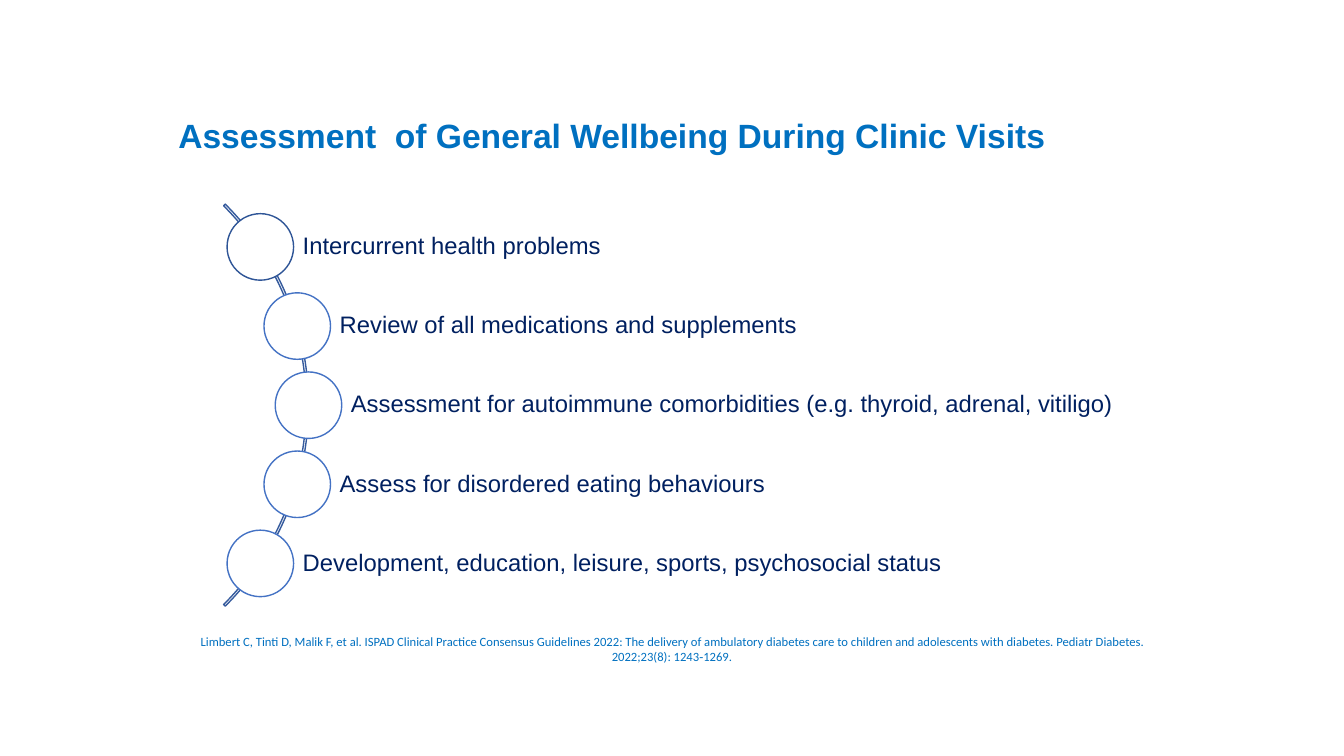
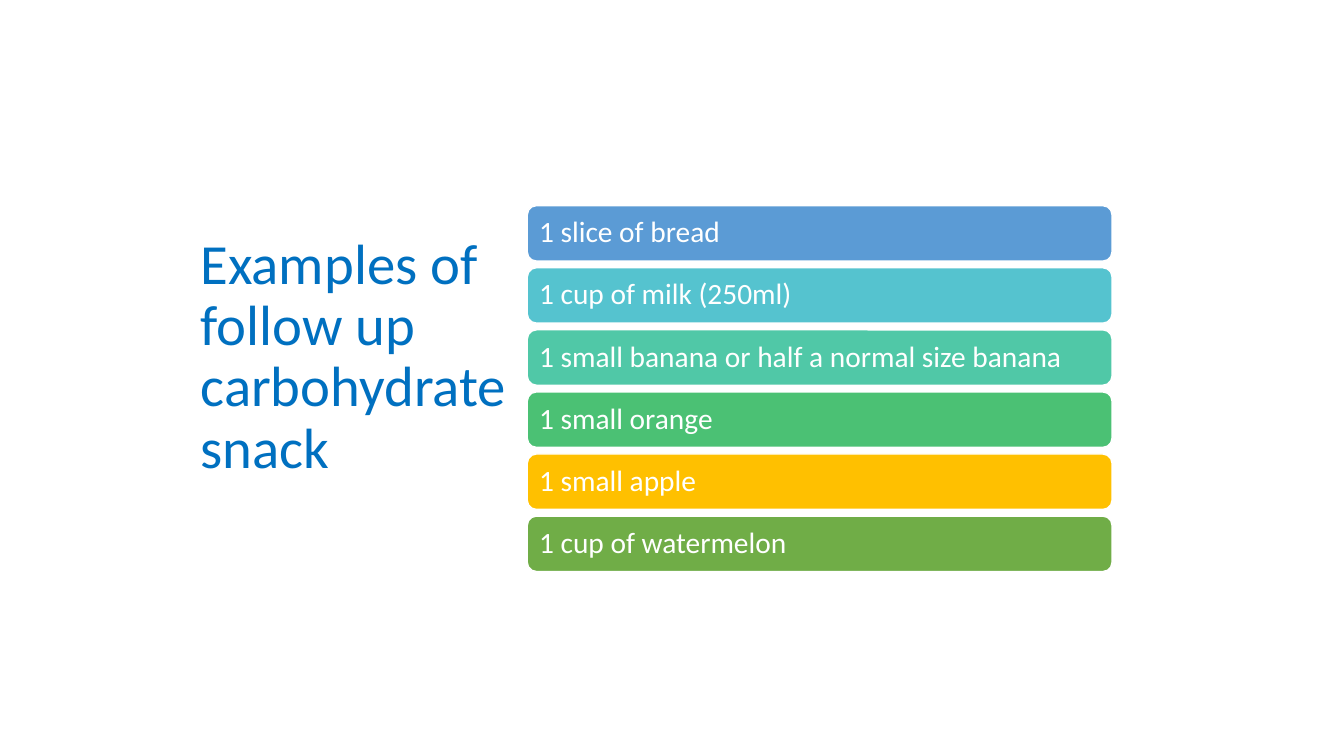
"""Build two slides: a wellbeing checklist on an arc and a list of snacks."""
import math

import pptx
import pptx.dml.color
import pptx.enum.shapes
import pptx.enum.text
import pptx.util

Inches = pptx.util.Inches
SHAPE = pptx.enum.shapes.MSO_SHAPE
MIDDLE = pptx.enum.text.MSO_ANCHOR.MIDDLE
TOP = pptx.enum.text.MSO_ANCHOR.TOP
LEFT = pptx.enum.text.PP_ALIGN.LEFT
CENTER = pptx.enum.text.PP_ALIGN.CENTER

BLUE, NAVY, WHITE = "0070C0", "002060", "FFFFFF"
ARC_LINE, FIRST_LINE, CIRCLE_LINE = "365B9D", "2F5597", "4472C4"

CHECKS = [
    "Intercurrent health problems",
    "Review of all medications and supplements",
    "Assessment for autoimmune comorbidities (e.g. thyroid, adrenal, vitiligo)",
    "Assess for disordered eating behaviours",
    "Development, education, leisure, sports, psychosocial status",
]
CITATION = (
    "Limbert C, Tinti D, Malik F, et al. ISPAD Clinical Practice Consensus "
    "Guidelines 2022: The delivery of ambulatory diabetes care to children and "
    "adolescents with diabetes. Pediatr Diabetes. 2022;23(8): 1243‐1269."
)
SNACKS = [
    ("1 slice of bread", "5B9BD5"),
    ("1 cup of milk (250ml)", "55C3CF"),
    ("1 small banana or half a normal size banana", "50C8A7"),
    ("1 small orange", "4BC174"),
    ("1 small apple", "FFC000"),
    ("1 cup of watermelon", "70AD47"),
]


def rgb(value):
    """Turn a hex string into a colour."""
    return pptx.dml.color.RGBColor.from_string(value)


def add_shape(s, kind, box, fill, line):
    """Add a preset shape; a fill of None leaves it hollow."""
    sp = s.shapes.add_shape(kind, *map(Inches, box))
    sp.shadow.inherit = False
    if fill:
        sp.fill.solid()
        sp.fill.fore_color.rgb = rgb(fill)
    else:
        sp.fill.background()
    sp.line.color.rgb = rgb(line)
    sp.line.width = pptx.util.Pt(1)
    return sp


def write(sp, text, font, size, color, bold=False, align=LEFT, anchor=MIDDLE,
          spacing=0.9, left=0.1, right=0.1):
    """Write one paragraph into a shape."""
    tf = sp.text_frame
    tf.word_wrap = True
    tf.vertical_anchor = anchor
    tf.margin_left, tf.margin_right = Inches(left), Inches(right)
    tf.margin_top = tf.margin_bottom = Inches(0.05)
    p = tf.paragraphs[0]
    p.alignment = align
    p.line_spacing = spacing
    r = p.add_run()
    r.text = text
    r.font.name = font
    r.font.size = pptx.util.Pt(size)
    r.font.bold = bold
    r.font.color.rgb = rgb(color)


def add_text(s, box, text, font, size, color, **style):
    """Add a text box."""
    write(s.shapes.add_textbox(*map(Inches, box)), text, font, size, color, **style)


def add_title(s, box, text, font, size, bold=False):
    """Add a slide title in the shared blue."""
    add_text(s, box, text, font, size, BLUE, bold=bold)


def add_arc_list(s, items):
    """Place circles and labels evenly down an arc."""
    cx, cy, radius, step = 0.24, 4.02, 2.82, 0.785
    circle, label_h, right = 0.66, 0.52, 11.27
    arc = add_shape(s, SHAPE.BLOCK_ARC,
                    (cx - radius, cy - radius, 2 * radius, 2 * radius), None, ARC_LINE)
    for i, value in enumerate((189, 27, 0.004)):
        arc.adjustments[i] = value
    for i, text in enumerate(items):
        dy = (i - (len(items) - 1) / 2) * step
        x, y = cx + math.sqrt(radius ** 2 - dy ** 2), cy + dy
        label = add_shape(s, SHAPE.RECTANGLE,
                          (x, y - label_h / 2, right - x, label_h), WHITE, WHITE)
        write(label, text, "Arial", 17, NAVY, left=0.42, right=0.05)
        add_shape(s, SHAPE.OVAL, (x - circle / 2, y - circle / 2, circle, circle),
                  WHITE, CIRCLE_LINE if i else FIRST_LINE)


def add_bars(s, items):
    """Stack coloured rounded bars at an equal pitch."""
    top, last_top = 2.04, 5.12
    pitch = (last_top - top) / (len(items) - 1)
    for i, (text, fill) in enumerate(items):
        bar = add_shape(s, SHAPE.ROUNDED_RECTANGLE,
                        (5.23, top + i * pitch, 5.8, 0.55), fill, WHITE)
        write(bar, text, "Calibri", 21, WHITE, left=0.09, right=0.09)


def main():
    """Build and save the presentation."""
    prs = pptx.Presentation()
    prs.slide_width, prs.slide_height = Inches(13.33), Inches(7.5)
    blank = prs.slide_layouts[6]

    s = prs.slides.add_slide(blank)
    add_title(s, (1.67, 0.82, 9, 1.1),
              "Assessment  of General Wellbeing During Clinic Visits", "Arial", 24, bold=True)
    add_arc_list(s, CHECKS)
    add_text(s, (1.83, 6.24, 9.67, 0.4), CITATION, "Calibri", 9, BLUE,
             align=CENTER, anchor=TOP, spacing=1.0)

    s = prs.slides.add_slide(blank)
    add_title(s, (1.89, 2.15, 3.82, 2.8),
              "Examples of follow up carbohydrate snack", "Calibri", 40.5)
    add_bars(s, SNACKS)

    prs.save("out.pptx")


if __name__ == "__main__":
    main()
